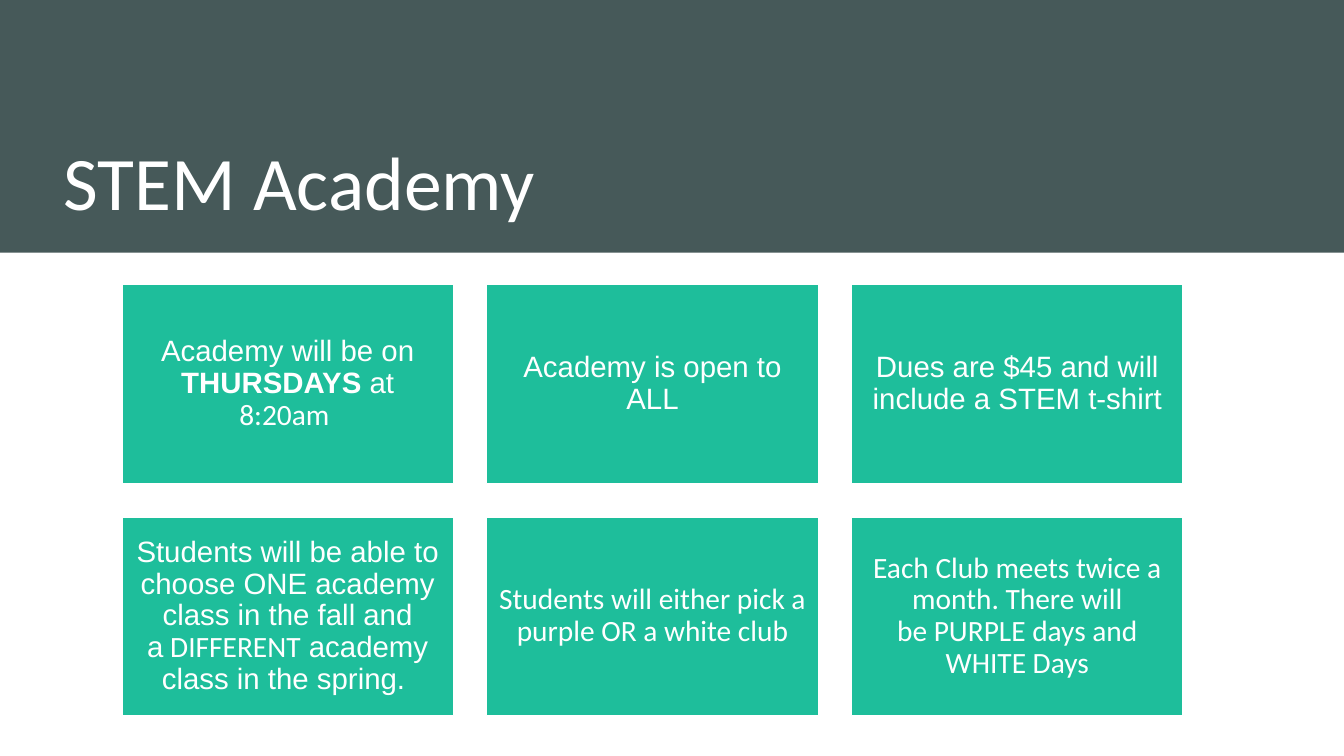
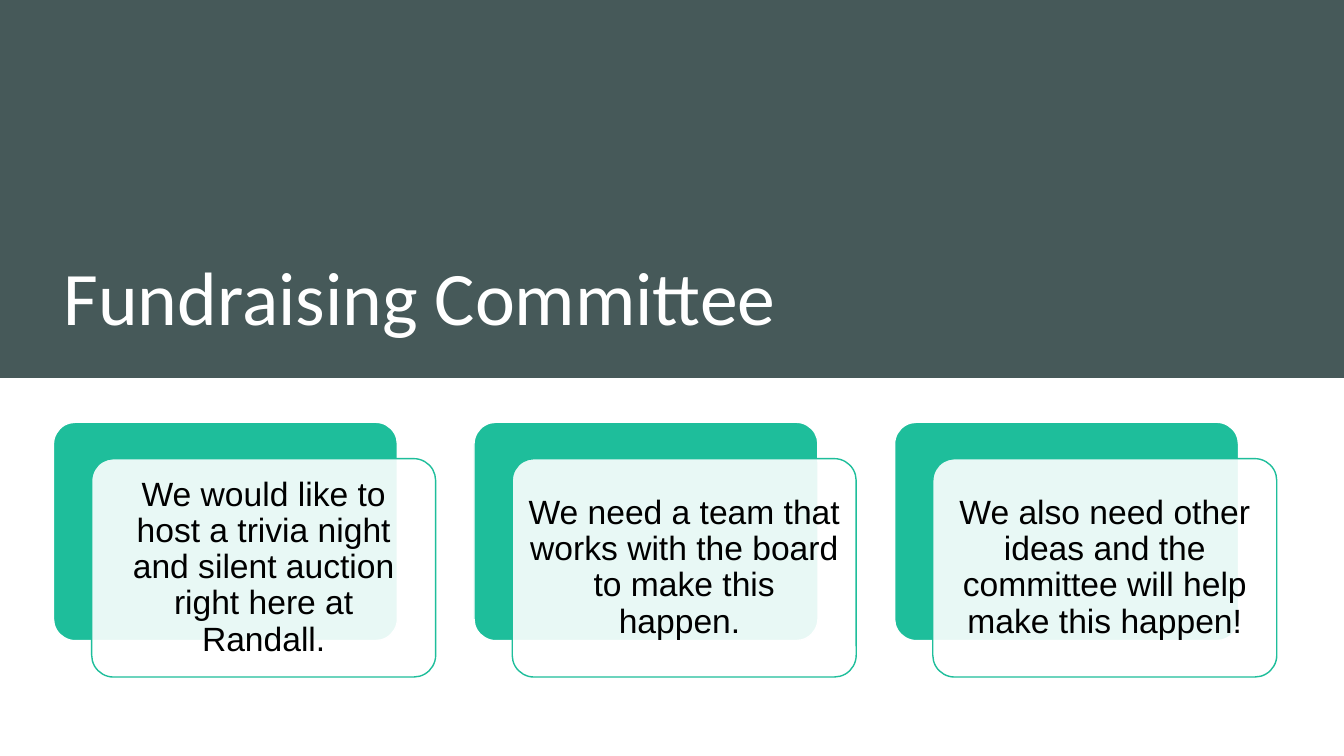
from pptx import Presentation
from pptx.dml.color import RGBColor
from pptx.enum.shapes import MSO_SHAPE
from pptx.enum.text import MSO_ANCHOR, MSO_AUTO_SIZE, PP_ALIGN
from pptx.oxml.ns import qn
from pptx.util import Pt
from lxml import etree

RECTANGLE, ROUNDED = MSO_SHAPE.RECTANGLE, MSO_SHAPE.ROUNDED_RECTANGLE
BOTTOM, MIDDLE = MSO_ANCHOR.BOTTOM, MSO_ANCHOR.MIDDLE
LEFT, CENTER = PP_ALIGN.LEFT, PP_ALIGN.CENTER
NO_AUTOFIT = MSO_AUTO_SIZE.NONE

SLATE = RGBColor(0x46, 0x59, 0x59)
GREEN = RGBColor(0x1E, 0xBE, 0x9B)
WHITE = RGBColor(0xFF, 0xFF, 0xFF)
BLACK = RGBColor(0, 0, 0)
ARIAL, CALIBRI = "Arial", "Calibri"

SLIDE_WIDTH, SLIDE_HEIGHT = 960, 540
TITLE_LEFT, TITLE_TOP, TITLE_WIDTH = 38.2, 28.8, 856

ACADEMY_TITLE = "STEM Academy"
ACADEMY_FACTS = [
    [("Academy will be on ", ARIAL, False), ("THURSDAYS", ARIAL, True),
     (" at ", ARIAL, False), ("8:20am\u00a0", CALIBRI, False)],
    [("Academy is open to ALL", ARIAL, False)],
    [("Dues are $45 and will include a STEM t-shirt", ARIAL, False)],
    [("Students will be able to choose ONE academy class in the fall and a", ARIAL, False),
     ("\u00a0DIFFERENT", CALIBRI, False),
     (" academy class in the spring.\u00a0", ARIAL, False)],
    [("Students will either pick a purple\u00a0OR a white club", CALIBRI, False)],
    [("Each\u00a0Club meets\u00a0twice a month. There will be\u00a0PURPLE days and WHITE Days",
      CALIBRI, False)],
]

FUNDRAISING_TITLE = "Fundraising Committee "
FUNDRAISING_NOTES = [
    "We would like to host a trivia night and silent auction right here at Randall.",
    "We need a team that works with the board to make this happen. ",
    "We also need other ideas and the committee will help make this happen!",
]


def write(shape, spans, *, size, color, align=CENTER, anchor=MIDDLE,
          insets=(7.2, 3.6, 7.2, 3.6), spacing=0.9):
    frame = shape.text_frame
    frame.word_wrap = True
    frame.auto_size = NO_AUTOFIT
    frame.vertical_anchor = anchor
    (frame.margin_left, frame.margin_top,
     frame.margin_right, frame.margin_bottom) = map(Pt, insets)
    para = frame.paragraphs[0]
    para.alignment = align
    para.line_spacing = spacing
    for text, font, bold in spans:
        span = para.add_run()
        span.text = text
        span.font.name = font
        span.font.bold = bold
        span.font.size = Pt(size)
        span.font.color.rgb = color


def add_block(page, kind, left, top, width, height, *, fill, line=None, opacity=None):
    block = page.shapes.add_shape(kind, Pt(left), Pt(top), Pt(width), Pt(height))
    block.shadow.inherit = False
    block.fill.solid()
    block.fill.fore_color.rgb = fill
    if line is None:
        block.line.fill.background()
    else:
        block.line.color.rgb = line
        block.line.width = Pt(1)
    if kind == ROUNDED:
        block.adjustments[0] = 0.1
    if opacity is not None:
        color = block.element.spPr.find(qn("a:solidFill")).find(qn("a:srgbClr"))
        etree.SubElement(color, qn("a:alpha")).set("val", str(opacity * 1000))
    return block


def add_page(deck, title, band_height, title_height):
    page = deck.slides.add_slide(deck.slide_layouts[5])
    band = add_block(page, RECTANGLE, 0, 0, SLIDE_WIDTH, band_height, fill=SLATE)
    heading = page.shapes.title
    heading.element.addprevious(band.element)
    heading.left, heading.top = Pt(TITLE_LEFT), Pt(TITLE_TOP)
    heading.width, heading.height = Pt(TITLE_WIDTH), Pt(title_height)
    write(heading, [(title, CALIBRI, False)], size=54, color=WHITE,
          align=LEFT, anchor=BOTTOM, insets=(7.2, 3.6, 7.2, 0))
    return page


def build_academy(deck):
    page = add_page(deck, ACADEMY_TITLE, 180.5, 133.2)
    left, top, width, height, gap, columns = 87.1, 203.4, 236.8, 142, 23.8, 3
    for index, fact in enumerate(ACADEMY_FACTS):
        row, column = divmod(index, columns)
        tile = add_block(page, RECTANGLE, left + column * (width + gap),
                         top + row * (height + gap), width, height,
                         fill=GREEN, line=WHITE)
        write(tile, fact, size=21, color=WHITE, insets=(6.3,) * 4)


def build_fundraising(deck):
    page = add_page(deck, FUNDRAISING_TITLE, 270, 215.3)
    left, top, width, height, step = 38.2, 301.6, 245.7, 156, 300.4
    shift_right, shift_down = 27.3, 26
    for index, note in enumerate(FUNDRAISING_NOTES):
        x = left + index * step
        add_block(page, ROUNDED, x, top, width, height, fill=GREEN, line=WHITE)
        card = add_block(page, ROUNDED, x + shift_right, top + shift_down, width, height,
                         fill=WHITE, line=GREEN, opacity=90)
        write(card, [(note, ARIAL, False)], size=24, color=BLACK, insets=(7.2,) * 4)


deck = Presentation()
deck.slide_width, deck.slide_height = Pt(SLIDE_WIDTH), Pt(SLIDE_HEIGHT)
build_academy(deck)
build_fundraising(deck)
deck.save("out.pptx")
